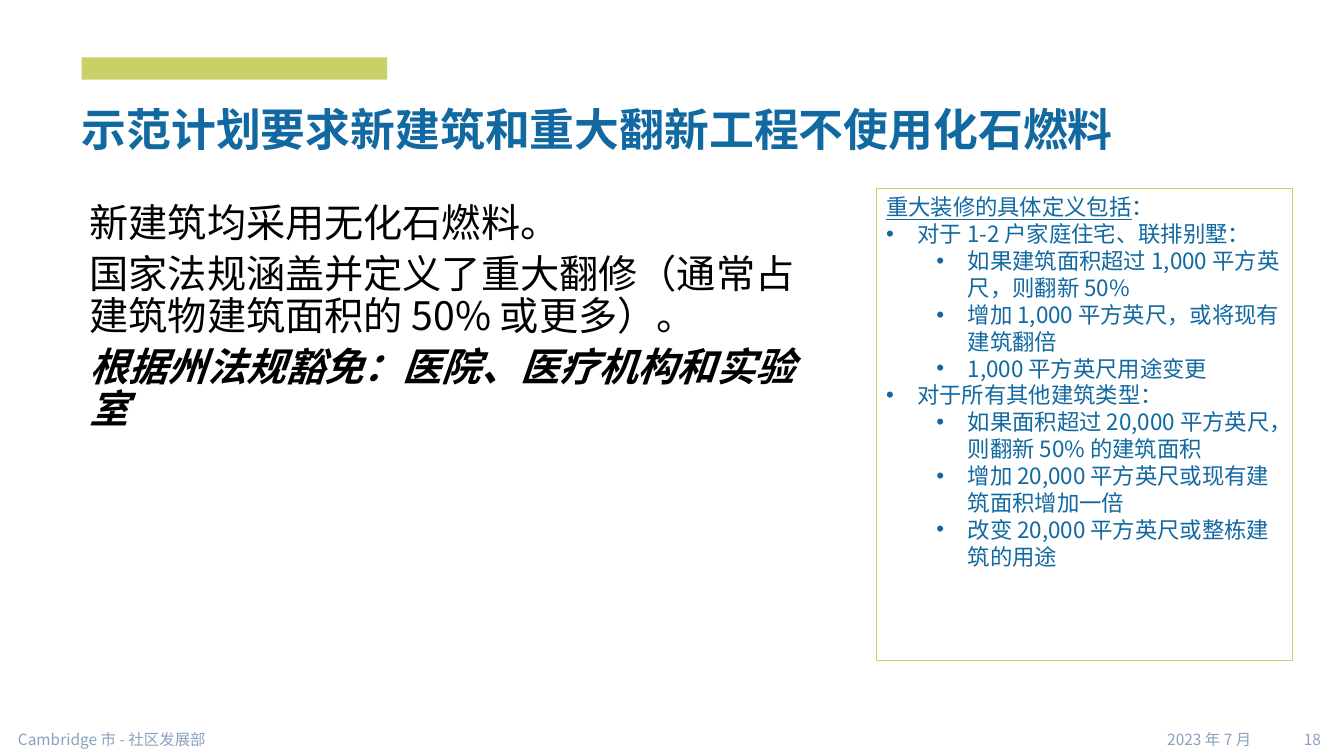
from dataclasses import dataclass

import lxml.etree
import pptx
import pptx.dml.color
import pptx.enum.lang
import pptx.enum.shapes
import pptx.enum.text
import pptx.oxml.ns
import pptx.util

Inches = pptx.util.Inches
Pt = pptx.util.Pt
RGBColor = pptx.dml.color.RGBColor
Align = pptx.enum.text.PP_ALIGN
Anchor = pptx.enum.text.MSO_ANCHOR

FONT = "Noto Sans CJK SC"
BLUE = RGBColor(0x12, 0x69, 0xA2)
LIME = RGBColor(0xC8, 0xD0, 0x68)
BLACK = RGBColor(0, 0, 0)
MIST = RGBColor(0x8A, 0xA1, 0xBF)


@dataclass(frozen=True)
class Style:
    size: float
    color: RGBColor
    bold: bool = False
    italic: bool = False
    underline: bool = False


@dataclass(frozen=True)
class Area:
    left: float
    top: float
    width: float
    height: float

    def lengths(self) -> tuple:
        return tuple(Inches(n) for n in (self.left, self.top, self.width, self.height))


@dataclass(frozen=True)
class Bullet:
    text: str
    level: int = 0


@dataclass(frozen=True)
class FooterItem:
    text: str
    area: Area
    align: Align


TITLE = Style(32, BLUE, bold=True)
BODY = Style(28, BLACK)
EXEMPTION = Style(28, BLACK, bold=True, italic=True)
DETAIL = Style(16, BLUE)
DETAIL_HEADING = Style(16, BLUE, underline=True)
FOOTER = Style(11, MIST)

BODY_TEXTS = [
    ("新建筑均采用无化石燃料。", BODY),
    ("国家法规涵盖并定义了重大翻修（通常占建筑物建筑面积的 50% 或更多）。", BODY),
    ("根据州法规豁免：医院、医疗机构和实验室", EXEMPTION),
]
DEFINITIONS = [
    Bullet("对于 1-2 户家庭住宅、联排别墅："),
    Bullet("如果建筑面积超过 1,000 平方英尺，则翻新 50%", 1),
    Bullet("增加 1,000 平方英尺，或将现有建筑翻倍", 1),
    Bullet("1,000 平方英尺用途变更", 1),
    Bullet("对于所有其他建筑类型："),
    Bullet("如果面积超过 20,000 平方英尺，则翻新 50% 的建筑面积", 1),
    Bullet("增加 20,000 平方英尺或现有建筑面积增加一倍", 1),
    Bullet("改变 20,000 平方英尺或整栋建筑的用途", 1),
]
FOOTER_ITEMS = [
    FooterItem("Cambridge 市 - 社区发展部", Area(0.08, 7.19, 4.5, 0.29), Align.LEFT),
    FooterItem("2023 年 7 月", Area(10.2, 7.19, 2.31, 0.29), Align.RIGHT),
    FooterItem("18", Area(12.51, 7.19, 0.69, 0.29), Align.RIGHT),
]


def add_span(para, text: str, style: Style) -> None:
    span = para.add_run()
    span.text = text
    font = span.font
    font.name = FONT
    font.size = Pt(style.size)
    font.bold = style.bold
    font.italic = style.italic
    font.underline = style.underline
    font.color.rgb = style.color
    font.language_id = pptx.enum.lang.MSO_LANGUAGE_ID.SIMPLIFIED_CHINESE
    east_asian = lxml.etree.SubElement(span._r.get_or_add_rPr(), pptx.oxml.ns.qn("a:ea"))
    east_asian.set("typeface", FONT)


def prepare_frame(box, anchor: Anchor):
    frame = box.text_frame
    frame.word_wrap = True
    frame.auto_size = pptx.enum.text.MSO_AUTO_SIZE.NONE
    frame.vertical_anchor = anchor
    return frame


def add_rectangle(page, area: Area):
    box = page.shapes.add_shape(pptx.enum.shapes.MSO_SHAPE.RECTANGLE, *area.lengths())
    box.shadow.inherit = False
    return box


def add_bullet(frame, bullet: Bullet) -> None:
    para = frame.add_paragraph()
    para.level = bullet.level
    para.alignment = Align.LEFT
    properties = para._p.get_or_add_pPr()
    properties.set("marL", str(Inches(0.31 + 0.5 * bullet.level)))
    properties.set("indent", str(Inches(-0.31)))
    typeface = lxml.etree.SubElement(properties, pptx.oxml.ns.qn("a:buFont"))
    typeface.set("typeface", "Arial")
    mark = lxml.etree.SubElement(properties, pptx.oxml.ns.qn("a:buChar"))
    mark.set("char", "•")
    add_span(para, bullet.text, DETAIL)


def format_title(page) -> None:
    title = page.shapes.title
    title.left, title.top, title.width, title.height = Area(0.71, 0.73, 11.5, 1.15).lengths()
    para = prepare_frame(title, Anchor.MIDDLE).paragraphs[0]
    para.alignment = Align.LEFT
    para.line_spacing = 0.9
    add_span(para, "示范计划要求新建筑和重大翻新工程不使用化石燃料", TITLE)


def add_body(page) -> None:
    box = page.shapes.add_textbox(*Area(0.79, 1.97, 7.25, 4.75).lengths())
    frame = prepare_frame(box, Anchor.TOP)
    for index, (text, style) in enumerate(BODY_TEXTS):
        para = frame.add_paragraph() if index else frame.paragraphs[0]
        para.line_spacing = 0.9
        para.space_before = Pt(6)
        add_span(para, text, style)


def add_definitions(page) -> None:
    box = add_rectangle(page, Area(8.69, 1.87, 4.13, 4.68))
    box.fill.background()
    box.line.color.rgb = LIME
    box.line.width = Pt(0.75)
    frame = prepare_frame(box, Anchor.TOP)
    heading = frame.paragraphs[0]
    heading.alignment = Align.LEFT
    add_span(heading, "重大装修的具体定义包括", DETAIL_HEADING)
    add_span(heading, "：", DETAIL)
    for bullet in DEFINITIONS:
        add_bullet(frame, bullet)


def add_footer(page, item: FooterItem) -> None:
    box = page.shapes.add_textbox(*item.area.lengths())
    para = prepare_frame(box, Anchor.MIDDLE).paragraphs[0]
    para.alignment = item.align
    add_span(para, item.text, FOOTER)


def add_accent(page) -> None:
    accent = add_rectangle(page, Area(0.81, 0.57, 3.03, 0.22))
    accent.fill.solid()
    accent.fill.fore_color.rgb = LIME
    accent.line.fill.background()


def main() -> None:
    deck = pptx.Presentation()
    deck.slide_width = Inches(13.33)
    deck.slide_height = Inches(7.5)
    page = deck.slides.add_slide(deck.slide_layouts.get_by_name("Title Only"))
    format_title(page)
    add_body(page)
    add_definitions(page)
    for item in FOOTER_ITEMS:
        add_footer(page, item)
    add_accent(page)
    deck.save("out.pptx")


if __name__ == "__main__":
    main()
